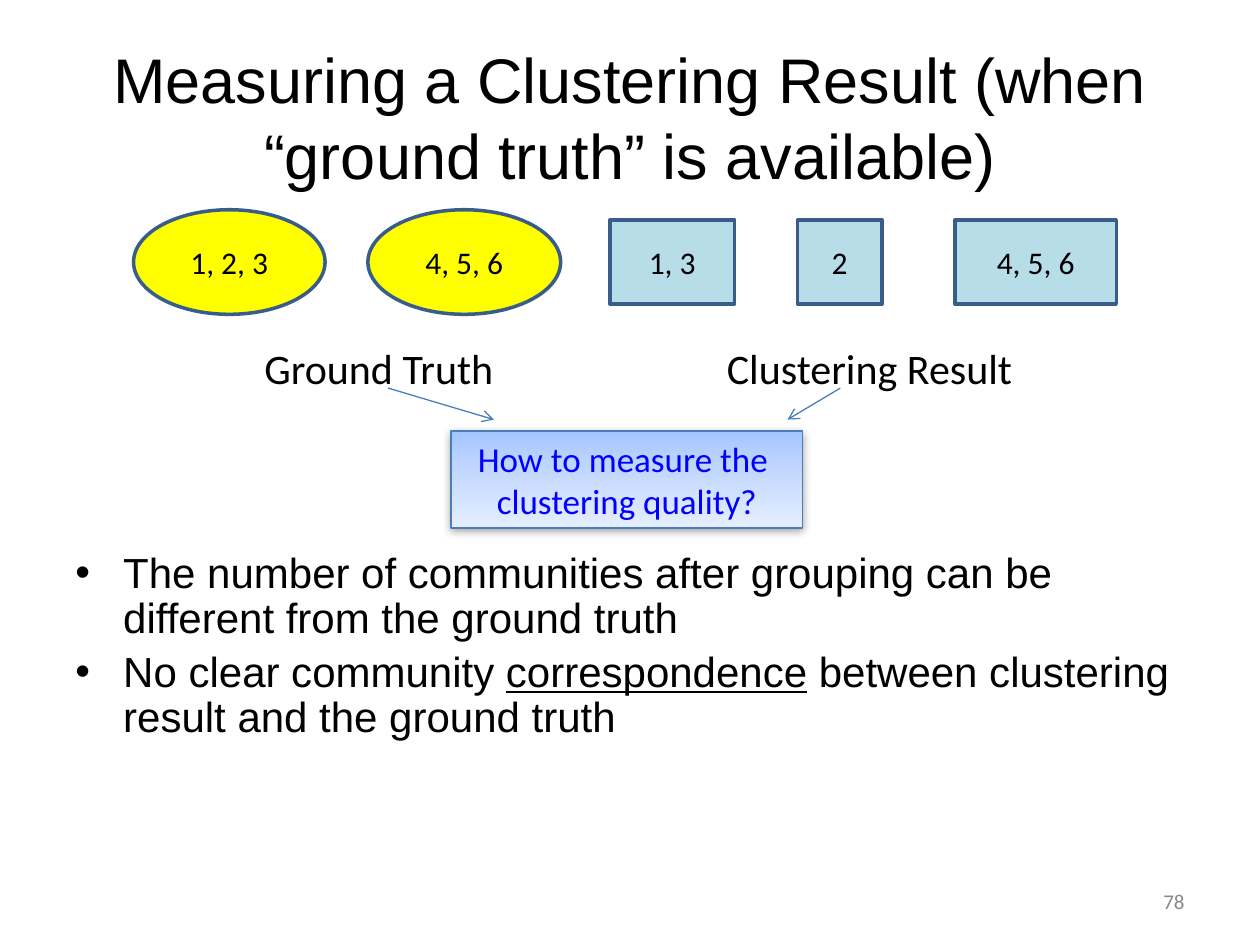
from lxml import etree
from pptx import Presentation
from pptx.dml.color import RGBColor
from pptx.enum.shapes import MSO_CONNECTOR, MSO_SHAPE
from pptx.enum.text import MSO_ANCHOR, MSO_AUTO_SIZE, PP_ALIGN
from pptx.oxml import parse_xml
from pptx.oxml.ns import nsdecls, qn
from pptx.util import Inches, Pt

OVAL, RECT = MSO_SHAPE.OVAL, MSO_SHAPE.RECTANGLE
STRAIGHT = MSO_CONNECTOR.STRAIGHT
TOP, MIDDLE = MSO_ANCHOR.TOP, MSO_ANCHOR.MIDDLE
LEFT, CENTER, RIGHT = PP_ALIGN.LEFT, PP_ALIGN.CENTER, PP_ALIGN.RIGHT
FIT_SHAPE = MSO_AUTO_SIZE.SHAPE_TO_FIT_TEXT

BLACK = RGBColor(0x00, 0x00, 0x00)
BLUE = RGBColor(0x00, 0x00, 0xFF)
GRAY = RGBColor(0x89, 0x89, 0x89)
YELLOW = RGBColor(0xFF, 0xFF, 0x00)
PALE_BLUE = RGBColor(0xB7, 0xDE, 0xE8)
OUTLINE = RGBColor(0x38, 0x5D, 0x8A)
ARROW = RGBColor(0x4A, 0x7E, 0xBB)
GRADIENT = [(0, RGBColor(0xA3, 0xC4, 0xFF)), (35, RGBColor(0xBF, 0xD5, 0xFF)),
            (100, RGBColor(0xE5, 0xEE, 0xFF))]

GROUPS = [
    (OVAL, 1.06, 1.52, "1, 2, 3"),
    (OVAL, 2.92, 1.53, "4, 5, 6"),
    (RECT, 4.84, 0.99, "1, 3"),
    (RECT, 6.33, 0.67, "2"),
    (RECT, 7.58, 1.28, "4, 5, 6"),
]
GROUP_CENTER = 2.08
BULLETS = [
    ["The number of communities after grouping can be different from the ground truth"],
    ["No clear community ", "correspondence", " between clustering result and the ground truth"],
]
UNDERLINED = "correspondence"


def format_text(tf, size, font="Calibri", color=BLACK, align=LEFT):
    for p in tf.paragraphs:
        p.alignment = align
        for r in p.runs:
            r.font.size = Pt(size)
            r.font.name = font
            r.font.color.rgb = color


def add_text(s, box, text, size, font="Calibri", color=BLACK, align=LEFT,
             anchor=TOP, wrap=True):
    tf = s.shapes.add_textbox(*map(Inches, box)).text_frame
    tf.word_wrap = wrap
    tf.vertical_anchor = anchor
    tf.text = text
    format_text(tf, size, font, color, align)
    return tf


def add_box(s, kind, box, text, size, color, line_color, line_width):
    sp = s.shapes.add_shape(kind, *map(Inches, box))
    sp.shadow.inherit = False
    sp.line.color.rgb = line_color
    sp.line.width = Pt(line_width)
    tf = sp.text_frame
    tf.vertical_anchor = MIDDLE
    tf.text = text
    format_text(tf, size, color=color, align=CENTER)
    return sp


def add_group(s, kind, left, width, text):
    height, fill = (0.83, YELLOW) if kind == OVAL else (0.67, PALE_BLUE)
    box = (left, GROUP_CENTER - height / 2, width, height)
    sp = add_box(s, kind, box, text, 18, BLACK, OUTLINE, 2)
    sp.fill.solid()
    sp.fill.fore_color.rgb = fill


def add_question(s):
    sp = add_box(s, RECT, (3.58, 3.42, 2.79, 0.77),
                 "How to measure the \nclustering quality?", 20, BLUE, ARROW, 0.75)
    tf = sp.text_frame
    tf.vertical_anchor = TOP
    tf.word_wrap = False
    tf.auto_size = FIT_SHAPE
    sp.fill.gradient()
    sp.fill.gradient_angle = 270
    sp_pr = sp._element.spPr
    stops = sp_pr.find(qn("a:gradFill")).find(qn("a:gsLst"))
    for stop in list(stops):
        stops.remove(stop)
    for position, color in GRADIENT:
        stop = etree.SubElement(stops, qn("a:gs"), pos=str(position * 1000))
        etree.SubElement(stop, qn("a:srgbClr"), val=str(color))
    sp_pr.find(qn("a:effectLst")).append(parse_xml(
        f'<a:outerShdw {nsdecls("a")} blurRad="{Pt(5)}" dist="{Pt(1.6)}" dir="5400000" '
        'rotWithShape="0"><a:srgbClr val="000000"><a:alpha val="37000"/></a:srgbClr>'
        '</a:outerShdw>'))


def add_arrow(s, *ends):
    cx = s.shapes.add_connector(STRAIGHT, *map(Inches, ends))
    cx.line.color.rgb = ARROW
    cx.line.width = Pt(0.75)
    etree.SubElement(cx.line._get_or_add_ln(), qn("a:tailEnd"), type="arrow")
    etree.SubElement(cx._element.spPr, qn("a:effectLst"))


def add_bullets(s, box):
    tf = s.shapes.add_textbox(*map(Inches, box)).text_frame
    tf.word_wrap = True
    for i, parts in enumerate(BULLETS):
        p = tf.add_paragraph() if i else tf.paragraphs[0]
        p.line_spacing = 0.9
        p.space_before = Pt(4.8)
        for part in parts:
            r = p.add_run()
            r.text = part
            if part == UNDERLINED:
                r.font.underline = True
        p_pr = p._p.get_or_add_pPr()
        p_pr.set("marL", str(Inches(0.38)))
        p_pr.set("indent", str(Inches(-0.38)))
        etree.SubElement(p_pr, qn("a:buFont"), typeface="Arial")
        etree.SubElement(p_pr, qn("a:buChar"), char="•")
    format_text(tf, 24, "Arial")


def main():
    prs = Presentation()
    prs.slide_width, prs.slide_height = Inches(10), Inches(7.5)
    s = prs.slides.add_slide(prs.slide_layouts[6])
    add_text(s, (0.5, 0.3, 9, 1.25),
             "Measuring a Clustering Result (when “ground truth” is available)",
             36, "Arial", align=CENTER, anchor=MIDDLE)
    add_bullets(s, (0.5, 4.33, 9, 2.12))
    for group in GROUPS:
        add_group(s, *group)
    for left, width, label in [(2, 2.06, "Ground Truth"), (5.67, 2.5, "Clustering Result")]:
        tf = add_text(s, (left, 2.67, width, 0.51), label, 24, wrap=False)
        tf.auto_size = FIT_SHAPE
    add_question(s)
    add_arrow(s, 3.08, 3.08, 3.92, 3.33)
    add_arrow(s, 6.67, 3.08, 6.25, 3.33)
    add_text(s, (7.17, 6.95, 2.33, 0.4), "78", 12, color=GRAY, align=RIGHT, anchor=MIDDLE)
    prs.save("out.pptx")


if __name__ == "__main__":
    main()
